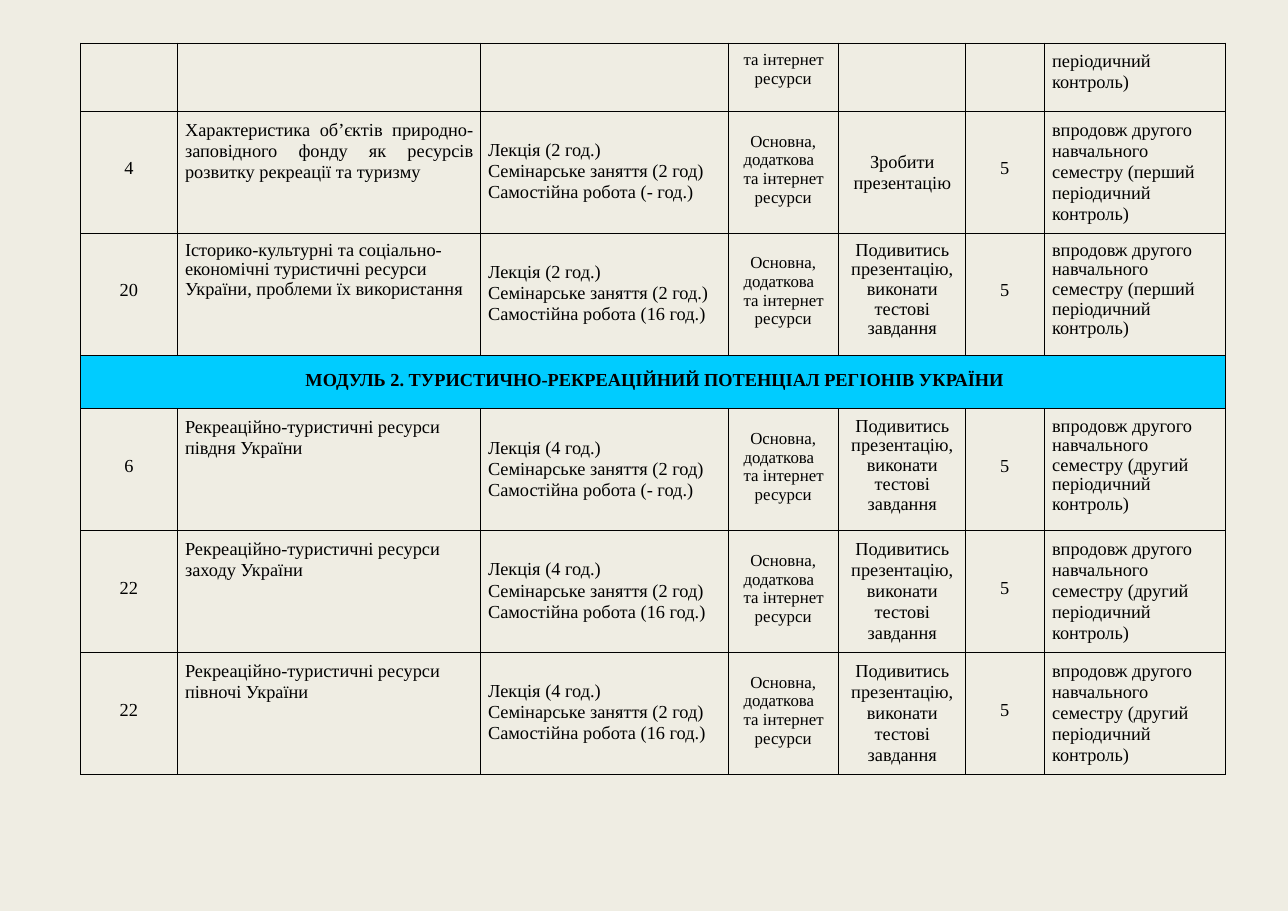
from dataclasses import dataclass
from lxml.etree import SubElement
from pptx import Presentation
from pptx.dml.color import RGBColor
from pptx.enum.text import MSO_ANCHOR, PP_ALIGN
from pptx.oxml.ns import qn
from pptx.util import Inches, Pt

# Content: number, topic, lecture, seminar, own work, task, points, control, tight rows
VIEW_AND_TEST = "Подивитись презентацію, виконати тестові завдання"
READING = ["Основна, додаткова та інтернет", "ресурси"]
CARRIED_OVER = {3: ["та інтернет", "ресурси"], 6: ["періодичний контроль)"]}
MODULE = "МОДУЛЬ 2. ТУРИСТИЧНО-РЕКРЕАЦІЙНИЙ ПОТЕНЦІАЛ РЕГІОНІВ УКРАЇНИ"
FIRST_MODULE = [
    ("4", "Характеристика об’єктів природно- заповідного фонду як ресурсів розвитку "
     "рекреації та туризму", "2 год.", "2 год", "- год.", "Зробити презентацію", "5", "перший", ()),
    ("20", "Історико-культурні та соціально- економічні туристичні ресурси України, "
     "проблеми їх використання", "2 год.", "2 год.", "16 год.", VIEW_AND_TEST, "5", "перший",
     (1, 4, 6)),
]
SECOND_MODULE = [
    (number, f"Рекреаційно-туристичні ресурси {region} України", "4 год.", "2 год", own_work,
     VIEW_AND_TEST, "5", "другий", tight)
    for number, region, own_work, tight in [
        ("6", "півдня", "- год.", (4, 6)),
        ("22", "заходу", "16 год.", ()),
        ("22", "півночі", "16 год.", ()),
    ]
]

# Grid, in inches
SLIDE_WIDTH, SLIDE_HEIGHT = 11.69, 8.27
TABLE_LEFT, TABLE_TOP, TABLE_HEIGHT = 0.73, 0.39, 6.64
COLUMNS = [0.88, 2.75, 2.25, 1, 1.15, 0.72, 1.64]
CARRIED_HEIGHT, MODULE_HEIGHT = 0.62, 0.49
MODULE_ROW = 1 + len(FIRST_MODULE)
LESSON_COUNT = len(FIRST_MODULE) + len(SECOND_MODULE)
LESSON_HEIGHT = (TABLE_HEIGHT - CARRIED_HEIGHT - MODULE_HEIGHT) / LESSON_COUNT


@dataclass(frozen=True)
class Theme:
    font: str = "Times New Roman"
    page: str = "EFEDE3"
    ink: str = "000000"
    module: str = "00CCFF"
    body: float = 12
    small: float = 11
    border: float = 0.5
    leading: float = 13.8
    small_leading: float = 12.2
    tight: float = 0.96


THEME = Theme()
TOP, MIDDLE = MSO_ANCHOR.TOP, MSO_ANCHOR.MIDDLE
LEFT, CENTER, JUSTIFY = PP_ALIGN.LEFT, PP_ALIGN.CENTER, PP_ALIGN.JUSTIFY

# Column styles: alignment, anchor, margins (left, top, right, bottom)
STYLES = [
    (CENTER, MIDDLE, (0, 0, 0, 0.07)),
    (LEFT, TOP, (0.07, 0.07, 0.06, 0)),
    (LEFT, MIDDLE, (0.07, 0, 0, 0.02)),
    (CENTER, MIDDLE, (0.13, 0, 0.11, 0.05)),
    (CENTER, TOP, (0.11, 0.07, 0.1, 0)),
    (CENTER, MIDDLE, (0, 0, 0, 0.07)),
    (LEFT, TOP, (0.07, 0.07, 0.07, 0)),
]
MODULE_STYLE = (CENTER, MIDDLE, (0.04, 0, 0, 0.04))


def draw_borders(cell):
    properties = cell._tc.get_or_add_tcPr()
    for position, side in enumerate(("lnL", "lnR", "lnT", "lnB")):
        line = SubElement(properties, qn(f"a:{side}"), w=str(Pt(THEME.border)))
        SubElement(SubElement(line, qn("a:solidFill")), qn("a:srgbClr"), val=THEME.ink)
        properties.insert(position, line)


def write(cell, lines, style, size=THEME.body, leading=Pt(THEME.leading), bold=False):
    alignment, cell.vertical_anchor, margins = style
    (cell.margin_left, cell.margin_top,
     cell.margin_right, cell.margin_bottom) = map(Inches, margins)
    for index, line in enumerate(lines):
        frame = cell.text_frame
        para = frame.add_paragraph() if index else frame.paragraphs[0]
        para.text = line
        para.alignment = alignment
        para.line_spacing = leading
        para.font.name, para.font.size, para.font.bold = THEME.font, Pt(size), bold
        para.font.color.rgb = RGBColor.from_string(THEME.ink)


def write_reading(cell, lines, anchor):
    top = 0.07 if anchor == TOP else 0
    write(cell, lines, (LEFT, anchor, (0.14, top, 0.11, 0.05)), THEME.small,
          Pt(THEME.small_leading))
    first, last = cell.text_frame.paragraphs
    if anchor == MIDDLE:
        first._p.get_or_add_pPr().set("indent", str(Inches(0.06)))
    last._p.get_or_add_pPr().set("marL", str(Inches(0.1)))


def write_lesson(row, lesson):
    number, topic, lecture, seminar, own_work, task, points, control, tight = lesson
    work = [f"Лекція ({lecture})", f"Семінарське заняття ({seminar}) Самостійна робота ({own_work})"]
    schedule = f"впродовж другого навчального семестру ({control} періодичний контроль)"
    texts = [[number], [topic], work, READING, [task], [points], [schedule]]
    for column, lines in enumerate(texts):
        cell = table.cell(row, column)
        alignment, anchor, margins = STYLES[column]
        if column == 3:
            write_reading(cell, lines, MIDDLE)
            continue
        if topic.startswith("Характеристика"):
            alignment = JUSTIFY if column == 1 else alignment
            anchor = MIDDLE if column == 4 else anchor
            margins = (0.11, 0, 0.1, 0) if column == 4 else margins
        leading = THEME.tight if column in tight else Pt(THEME.leading)
        write(cell, lines, (alignment, anchor, margins), leading=leading)


# Page
deck = Presentation()
deck.slide_width, deck.slide_height = Inches(SLIDE_WIDTH), Inches(SLIDE_HEIGHT)
page = deck.slides.add_slide(deck.slide_layouts[6])
page.background.fill.solid()
page.background.fill.fore_color.rgb = RGBColor.from_string(THEME.page)

# Empty table with borders
table = page.shapes.add_table(
    LESSON_COUNT + 2, len(COLUMNS), Inches(TABLE_LEFT), Inches(TABLE_TOP),
    Inches(sum(COLUMNS)), Inches(TABLE_HEIGHT)).table
table.first_row = table.horz_banding = False
for column, width in zip(table.columns, COLUMNS):
    column.width = Inches(width)
for index, row in enumerate(table.rows):
    row.height = Inches({0: CARRIED_HEIGHT, MODULE_ROW: MODULE_HEIGHT}.get(index, LESSON_HEIGHT))
for cell in table.iter_cells():
    cell.fill.background()
    draw_borders(cell)

# Row carried over from the previous page
write_reading(table.cell(0, 3), CARRIED_OVER[3], TOP)
write(table.cell(0, 6), CARRIED_OVER[6], STYLES[6])

# Lessons
for row, lesson in enumerate(FIRST_MODULE, 1):
    write_lesson(row, lesson)
for row, lesson in enumerate(SECOND_MODULE, MODULE_ROW + 1):
    write_lesson(row, lesson)

# Module heading
heading = table.cell(MODULE_ROW, 0)
heading.merge(table.cell(MODULE_ROW, len(COLUMNS) - 1))
heading.fill.solid()
heading.fill.fore_color.rgb = RGBColor.from_string(THEME.module)
write(heading, [MODULE], MODULE_STYLE, bold=True)

deck.save("out.pptx")
